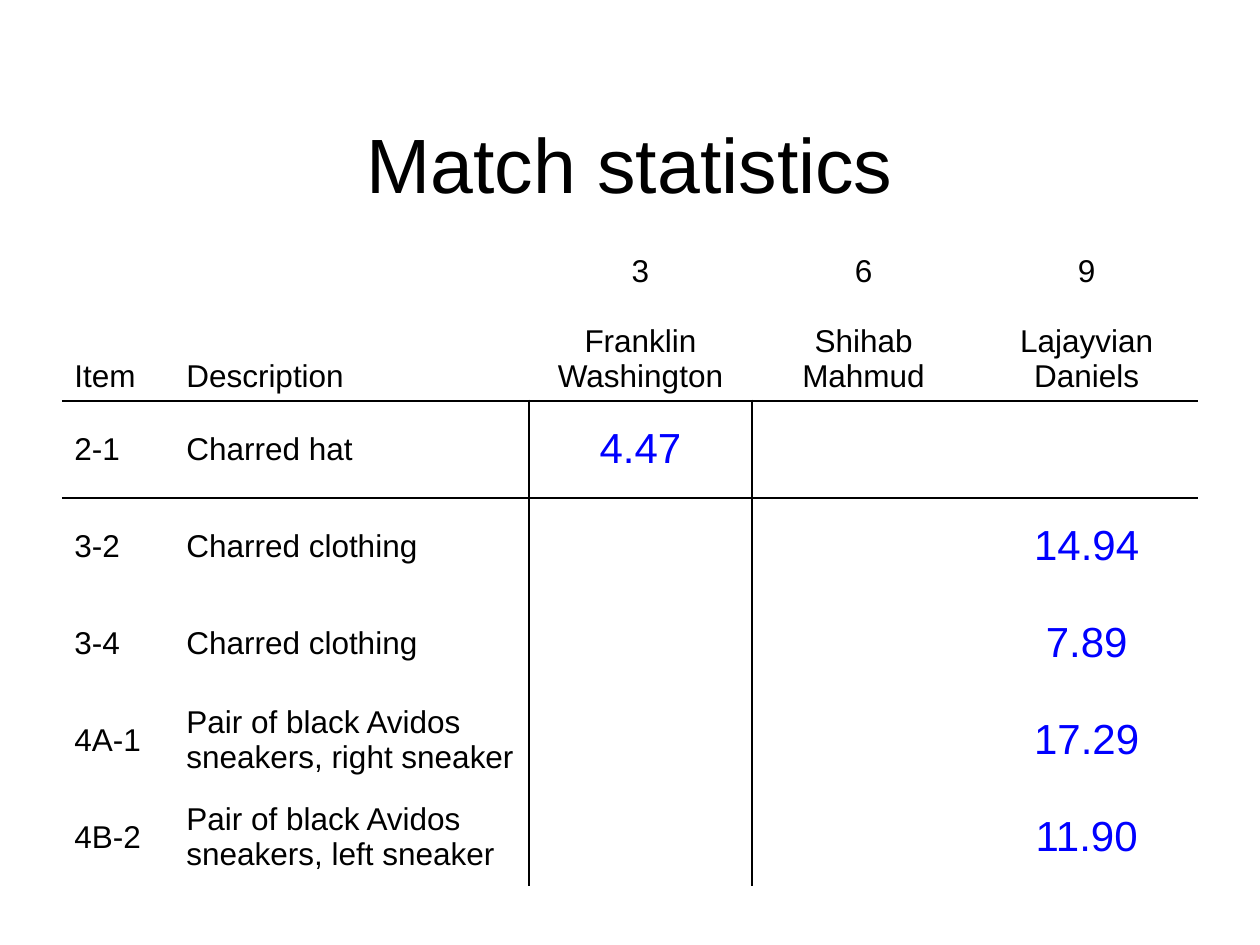
"""Build the match statistics slide with its table of items and people."""
from lxml import etree
from pptx import Presentation
from pptx import util as u
from pptx.dml.color import RGBColor
from pptx.enum import text
from pptx.oxml.ns import qn

Pt = u.Pt
HUES = {"ink": "000000", "stat": "0000FF"}
FONT = "Arial"
PLAIN = "{2D5ABB26-0587-4C30-8999-92F81FD0307C}"
WIDTHS = [64, 203, 127.5, 127.5, 127.5]
HEADS = [["Item"], ["Description"], ["3", "Franklin Washington"],
         ["6", "Shihab Mahmud"], ["9", "Lajayvian Daniels"]]
ITEMS = [
    ("2-1", "Charred hat", "4.47", "", ""),
    ("3-2", "Charred clothing", "", "", "14.94"),
    ("3-4", "Charred clothing", "", "", "7.89"),
    ("4A-1", "Pair of black Avidos sneakers, right sneaker", "", "", "17.29"),
    ("4B-2", "Pair of black Avidos sneakers, left sneaker", "", "", "11.90"),
]


def write(para, words, size, hue, align):
    para.alignment = align
    run = para.add_run()
    run.text = words
    run.font.name = FONT
    run.font.size = Pt(size)
    run.font.color.rgb = RGBColor.from_string(HUES[hue])


def border(cell, sides):
    props = cell._tc.get_or_add_tcPr()
    for side in sides:
        line = etree.SubElement(props, qn(f"a:ln{side}"), w=str(Pt(1.5)))
        fill = etree.SubElement(line, qn("a:solidFill"))
        etree.SubElement(fill, qn("a:srgbClr"), val=HUES["ink"])


deck = Presentation()
deck.slide_width, deck.slide_height = Pt(720), Pt(540)
slide = deck.slides.add_slide(deck.slide_layouts[5])

title = slide.shapes.title
title.left, title.top, title.width, title.height = Pt(3.6), Pt(48.2), Pt(712.8), Pt(90)
title.text_frame.vertical_anchor = text.MSO_ANCHOR.MIDDLE
write(title.text_frame.paragraphs[0], "Match statistics", 44, "ink", text.PP_ALIGN.CENTER)

rows = [HEADS] + [[[words] for words in item] for item in ITEMS]
frame = slide.shapes.add_table(len(rows), len(WIDTHS), Pt(35.3), Pt(135.4),
                               Pt(sum(WIDTHS)), Pt(370.8))
table = frame.table
table.first_row = table.horz_banding = False
table._tbl.tblPr.find(qn("a:tableStyleId")).text = PLAIN
for col, width in zip(table.columns, WIDTHS):
    col.width = Pt(width)

for r, row in enumerate(rows):
    table.rows[r].height = Pt(55.44 if r else 93.6)
    for c, lines in enumerate(row):
        cell = table.cell(r, c)
        cell.vertical_anchor = text.MSO_ANCHOR.MIDDLE if r else text.MSO_ANCHOR.BOTTOM
        stat = r > 0 and c > 1
        align = text.PP_ALIGN.CENTER if c > 1 else text.PP_ALIGN.LEFT
        for n, words in enumerate(lines):
            if not words:
                continue
            para = cell.text_frame.add_paragraph() if n else cell.text_frame.paragraphs[0]
            if n:
                para.space_before = Pt(20)
            write(para, words, 24 if stat else 18, "stat" if stat else "ink", align)
        sides = {"L": r and c == 2, "R": r and c == 1, "T": r == 1, "B": r == 0}
        border(cell, [side for side, shown in sides.items() if shown])
        cell.fill.background()

deck.save("out.pptx")
